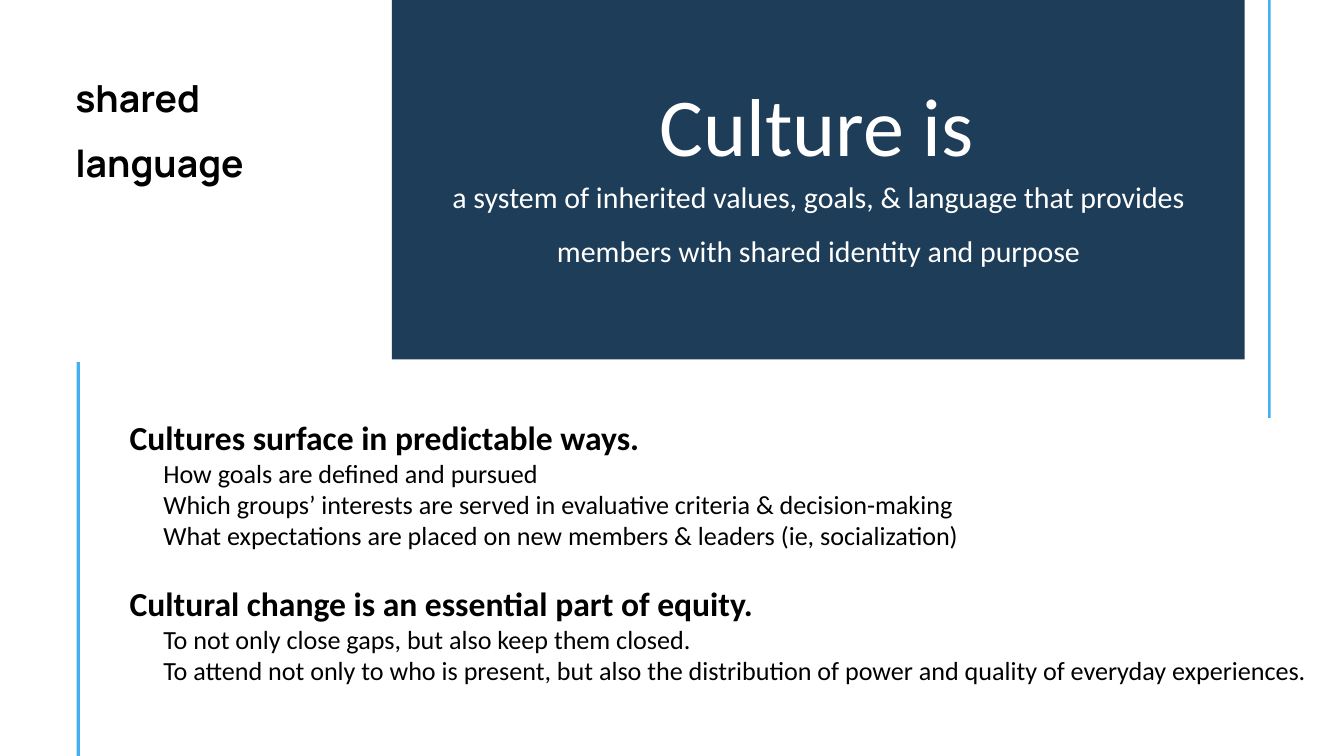
from pptx import Presentation
from pptx.dml.color import RGBColor
from pptx.enum.shapes import MSO_SHAPE as Shape
from pptx.enum.text import MSO_ANCHOR as Anchor, MSO_AUTO_SIZE as Fit, PP_ALIGN as Align
from pptx.util import Inches, Pt
from lxml.etree import SubElement
from pptx.oxml.ns import qn

NAVY = RGBColor(0x1E, 0x3D, 0x58)
SKY = RGBColor(0x43, 0xB0, 0xF1)
WHITE = RGBColor(0xFF, 0xFF, 0xFF)
BLACK = RGBColor(0, 0, 0)

# Content
LABEL = "shared language"
TITLE = "Culture is"
MEANING = ("a system of inherited values, goals, & language that provides "
           "members with shared identity and purpose")
POINTS = [
    ("Cultures surface in predictable ways.", [
        "How goals are defined and pursued",
        "Which groups’ interests are served in evaluative criteria & decision-making",
        "What expectations are placed on new members & leaders (ie, socialization)",
    ]),
    ("Cultural change is an essential part of equity.", [
        "To not only close gaps, but also keep them closed.",
        "To attend not only to who is present, but also the distribution of "
        "power and quality of everyday experiences.",
    ]),
]

# Layout, in inches
WIDE, HIGH = 20, 11.25
PANEL = (5.83, 0, 12.69, 5.35)
RULES = [(18.87, 0, 0.04, 6.22), (1.14, 5.39, 0.05, HIGH - 5.39)]
GAP = 34  # points between the two groups


def place(shape, box):
    shape.left, shape.top, shape.width, shape.height = map(Inches, box)


def setup(shape, box, pad=(0, 0)):
    """Place a text shape and return its cleared frame."""
    place(shape, box)
    frame = shape.text_frame
    frame.word_wrap = True
    frame.auto_size = Fit.NONE
    frame.vertical_anchor = Anchor.TOP
    frame.margin_left = frame.margin_right = Inches(pad[0])
    frame.margin_top = frame.margin_bottom = Inches(pad[1])
    return frame


def write(para, text, size, color=BLACK, face="Calibri", bold=False,
          align=Align.LEFT, lead=1.0, before=0, level=0):
    props = para._p.get_or_add_pPr()
    props.set("marL", str(Inches(0.5 * level)))
    props.set("indent", "0")
    SubElement(props, qn("a:buNone"))
    para.level = level
    para.alignment = align
    para.line_spacing = lead
    para.space_before, para.space_after = Pt(before), Pt(0)
    run = para.add_run()
    run.text = text
    font = run.font
    font.size, font.name, font.bold = Pt(size), face, bold
    font.color.rgb = color


def block(slide, box, color):
    shape = slide.shapes.add_shape(Shape.RECTANGLE, 0, 0, 0, 0)
    place(shape, box)
    shape.shadow.inherit = False
    shape.fill.solid()
    shape.fill.fore_color.rgb = color
    shape.line.fill.background()


def main():
    deck = Presentation()
    deck.slide_width, deck.slide_height = Inches(WIDE), Inches(HIGH)
    slide = deck.slides.add_slide(deck.slide_layouts[1])
    title, body = slide.placeholders
    shapes = slide.shapes

    # Corner label
    label = setup(shapes.add_textbox(0, 0, 0, 0), (1.12, 0.84, 3.69, 1.63))
    write(label.paragraphs[0], LABEL, 40, face="Manrope", bold=True, lead=1.43)

    # Rules and panel
    for rule in RULES:
        block(slide, rule, SKY)
    block(slide, PANEL, NAVY)

    # Definition, with the title brought in front of the panel
    text = setup(shapes.add_textbox(0, 0, 0, 0), (6.1, 2.39, 12.17, 1.35))
    write(text.paragraphs[0], MEANING, 32, WHITE, align=Align.CENTER, lead=1.5)
    head = setup(title, (6.07, 1.1, 12.17, 1.48))
    write(head.paragraphs[0], TITLE, 88, WHITE, align=Align.CENTER)
    shapes._spTree.append(title._element)

    # Points
    frame = setup(body, (1.83, 6.15, 17.85, 4.14), (0.1, 0.05))
    for i, (lead, items) in enumerate(POINTS):
        para = frame.add_paragraph() if i else frame.paragraphs[0]
        write(para, lead, 36, bold=True, before=GAP if i else 0)
        for item in items:
            write(frame.add_paragraph(), item, 28, level=1)

    deck.save("out.pptx")


if __name__ == "__main__":
    main()
